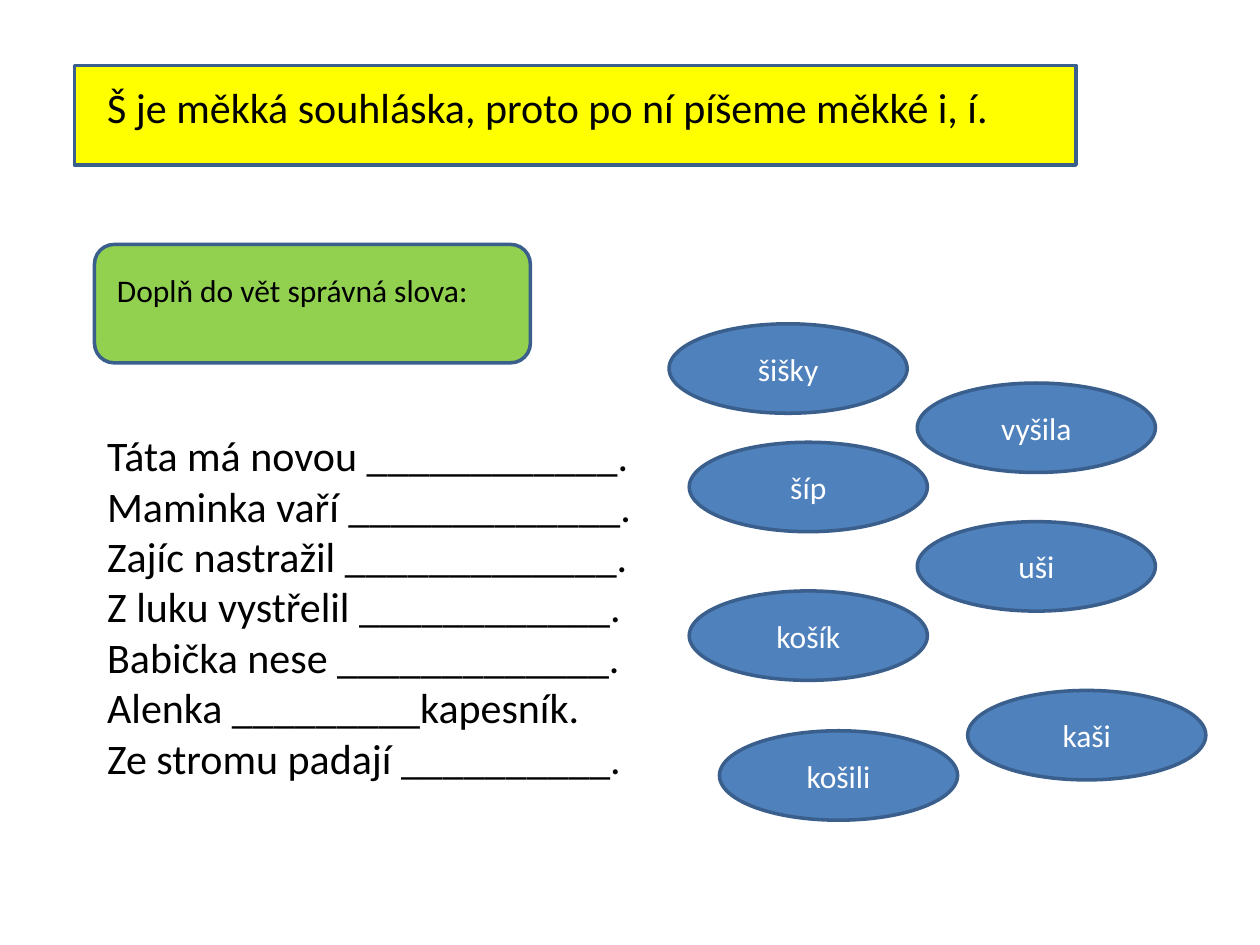
import pptx
import pptx.util
import pptx.dml.color
import pptx.enum.shapes
import pptx.enum.text
import pptx.oxml

Inches, Pt = pptx.util.Inches, pptx.util.Pt
RGBColor = pptx.dml.color.RGBColor
SHAPE = pptx.enum.shapes.MSO_SHAPE
ALIGN = pptx.enum.text.PP_ALIGN
ANCHOR = pptx.enum.text.MSO_ANCHOR

BLACK = RGBColor(0x00, 0x00, 0x00)
WHITE = RGBColor(0xFF, 0xFF, 0xFF)
YELLOW = RGBColor(0xFF, 0xFF, 0x00)
GREEN = RGBColor(0x92, 0xD0, 0x50)
BLUE = RGBColor(0x4F, 0x81, 0xBD)
OUTLINE = RGBColor(0x3A, 0x5F, 0x8C)
FONT = "Calibri"

SENTENCES = [
    "Táta má novou ____________.",
    "Maminka vaří _____________.",
    "Zajíc nastražil _____________.",
    "Z luku vystřelil ____________.",
    "Babička nese _____________.",
    "Alenka _________kapesník.",
    "Ze stromu padají __________.",
]

# Word, left, top
WORDS = [
    ("šišky", 5.31, 2.57),
    ("vyšila", 7.28, 3.04),
    ("šíp", 5.47, 3.51),
    ("uši", 7.28, 4.14),
    ("košík", 5.47, 4.69),
    ("kaši", 7.68, 5.48),
    ("košili", 5.71, 5.8),
]
OVAL_SIZE = (1.89, 0.71)


def write(sp, lines, size, color=BLACK, align=ALIGN.LEFT, anchor=ANCHOR.TOP):
    tf = sp.text_frame
    tf.word_wrap = True
    tf.auto_size = pptx.enum.text.MSO_AUTO_SIZE.NONE
    tf.vertical_anchor = anchor
    for i, line in enumerate(lines):
        p = tf.paragraphs[0] if i == 0 else tf.add_paragraph()
        p.alignment = align
        p.space_before = Pt(0)
        r = p.add_run()
        r.text = line
        r.font.name = FONT
        r.font.size = Pt(size)
        r.font.color.rgb = color


def add_box(s, kind, left, top, width, height, fill):
    sp = s.shapes.add_shape(kind, Inches(left), Inches(top), Inches(width), Inches(height))
    sp.shadow.inherit = False
    sp.fill.solid()
    sp.fill.fore_color.rgb = fill
    sp.line.color.rgb = OUTLINE
    sp.line.width = Pt(2)
    return sp


def place_in_front(sp, left, top, width, height):
    sp.left, sp.top = Inches(left), Inches(top)
    sp.width, sp.height = Inches(width), Inches(height)
    sp.element.getparent().append(sp.element)


def remove_bullets(tf):
    for p in tf.paragraphs:
        pPr = p._p.get_or_add_pPr()
        pPr.set("marL", "0")
        pPr.set("indent", "0")
        pPr.append(pptx.oxml.parse_xml(
            '<a:buNone xmlns:a="http://schemas.openxmlformats.org/drawingml/2006/main"/>'))


def main():
    prs = pptx.Presentation()
    prs.slide_width, prs.slide_height = Inches(10), Inches(7.5)
    s = prs.slides.add_slide(prs.slide_layouts[1])
    title, body = s.shapes.title, s.placeholders[1]

    # Coloured panels behind the rule and the task
    add_box(s, SHAPE.ROUNDED_RECTANGLE, 0.75, 1.94, 3.46, 0.94, GREEN)
    add_box(s, SHAPE.RECTANGLE, 0.59, 0.52, 7.95, 0.79, YELLOW)

    # Spelling rule
    place_in_front(title, 0.75, 0.6, 7.64, 0.5)
    write(title, ["Š je měkká souhláska, proto po ní píšeme měkké i, í."], 24)

    # Task
    task = s.shapes.add_textbox(Inches(0.83), Inches(2.1), Inches(7.8), Inches(0.4))
    write(task, ["Doplň do vět správná slova:"], 18)

    # Sentences to complete
    place_in_front(body, 0.75, 3.36, 4.41, 2.93)
    write(body, SENTENCES, 24)
    remove_bullets(body.text_frame)

    # Words to choose from
    for word, left, top in WORDS:
        oval = add_box(s, SHAPE.OVAL, left, top, *OVAL_SIZE, BLUE)
        write(oval, [word], 18, WHITE, ALIGN.CENTER, ANCHOR.MIDDLE)

    prs.save("out.pptx")


if __name__ == "__main__":
    main()
